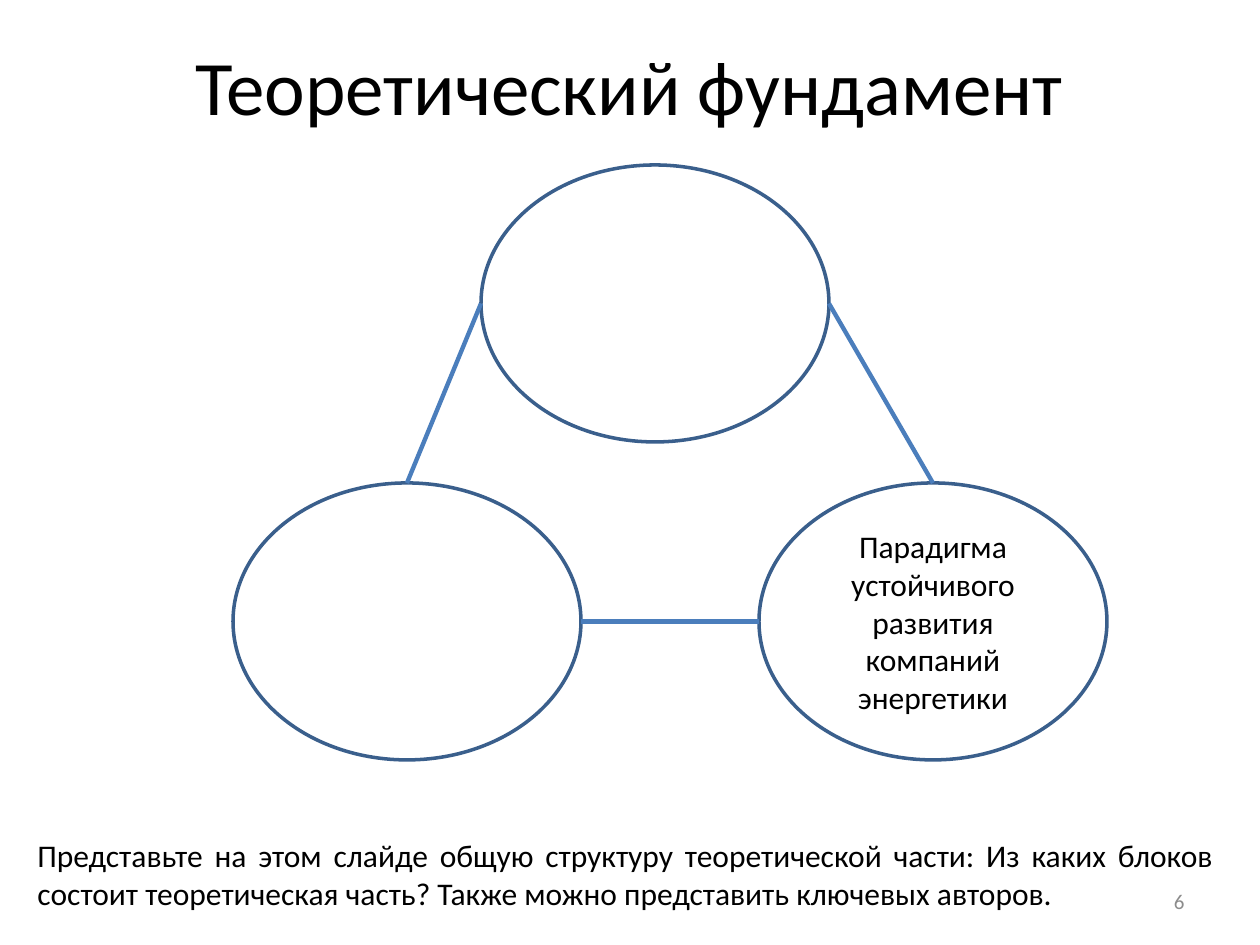
from lxml import etree
from pptx import Presentation
from pptx import util as u
from pptx.dml.color import RGBColor
from pptx.enum import shapes, text
from pptx.oxml.ns import qn

PX = 914400 // 126
OVAL_W, OVAL_H = 348, 277


def px(*lengths):
    return [u.Emu(length * PX) for length in lengths]


def colour(value):
    return RGBColor.from_string(value)


def write(shape, words, size, align, ink="000000", anchor=text.MSO_ANCHOR.MIDDLE):
    frame = shape.text_frame
    frame.word_wrap = True
    frame.vertical_anchor = anchor
    para = frame.paragraphs[0]
    para.text = words
    para.alignment = align
    para.font.name = "Calibri"
    para.font.size = u.Pt(size)
    para.font.color.rgb = colour(ink)
    return frame


def add_oval(page, left, top, words=""):
    oval = page.shapes.add_shape(
        shapes.MSO_SHAPE.OVAL, *px(left, top, OVAL_W, OVAL_H))
    oval.shadow.inherit = False
    oval.fill.background()
    oval.line.color.rgb = colour("3A5F8C")
    oval.line.width = u.Pt(2)
    if words:
        frame = write(oval, words, 18, text.PP_ALIGN.CENTER)
        frame.margin_left = frame.margin_right = 0
        frame.margin_top = frame.margin_bottom = 0
    return oval


def side(oval, right):
    """Middle of the oval's left or right side."""
    return oval.left + oval.width * right, oval.top + oval.height // 2


def add_line(page, start, end):
    line = page.shapes.add_connector(shapes.MSO_CONNECTOR.STRAIGHT, *start, *end)
    line.line.color.rgb = colour("4B7EBC")
    line.line.width = u.Pt(2.5)
    etree.SubElement(line._element.spPr, qn("a:effectLst"))
    return line


def main():
    deck = Presentation()
    deck.slide_width, deck.slide_height = px(1260, 945)
    page = deck.slides.add_slide(deck.slide_layouts[5])

    # Title
    title = page.shapes.title
    title.left, title.top, title.width, title.height = px(63, 6, 1134, 158)
    write(title, "Теоретический фундамент", 44, text.PP_ALIGN.CENTER)

    # Three theory blocks
    left_block = add_oval(page, 233, 483)
    right_block = add_oval(page, 759, 483,
                           "Парадигма устойчивого развития компаний энергетики")
    top_block = add_oval(page, 481, 165)

    # Links between the blocks
    add_line(page, side(left_block, True), side(right_block, False))
    for block, right in ((left_block, False), (right_block, True)):
        start = side(top_block, right)
        add_line(page, start, start).end_connect(block, 0)

    # Guidance and page number
    guidance = page.shapes.add_textbox(*px(25, 830, 1201, 89))
    write(guidance,
          "Представьте на этом слайде общую структуру теоретической части: "
          "Из каких блоков состоит теоретическая часть? "
          "Также можно представить ключевых авторов.",
          18, text.PP_ALIGN.JUSTIFY, anchor=text.MSO_ANCHOR.TOP)
    guidance.text_frame.auto_size = text.MSO_AUTO_SIZE.SHAPE_TO_FIT_TEXT
    number = page.shapes.add_textbox(*px(903, 876, 294, 50))
    write(number, "6", 12, text.PP_ALIGN.RIGHT, "8C8C8C")

    deck.save("out.pptx")


if __name__ == "__main__":
    main()
